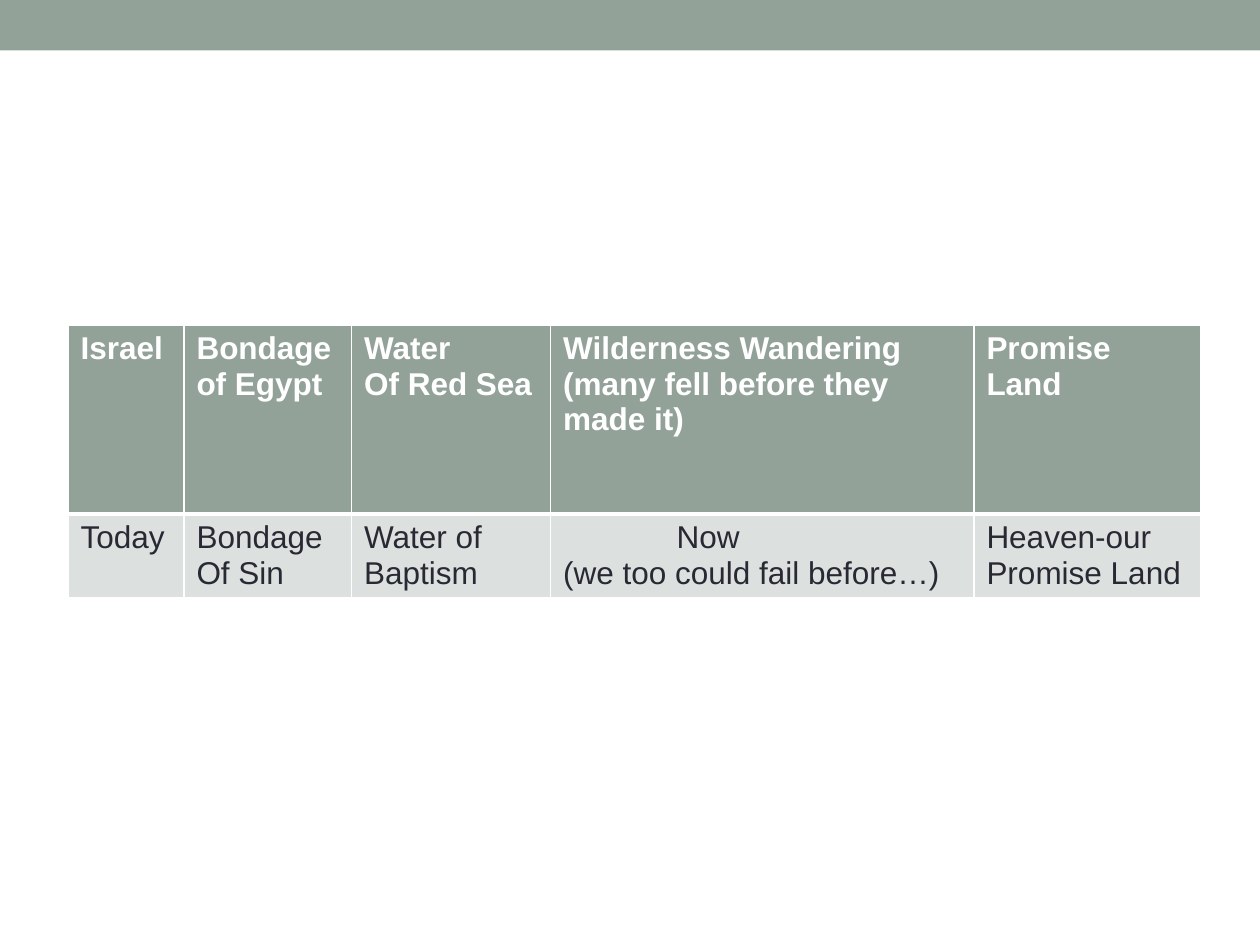
from lxml import etree
from pptx import Presentation
from pptx.dml.color import RGBColor
from pptx.enum.shapes import MSO_SHAPE
from pptx.oxml.ns import qn
from pptx.util import Inches, Pt

RECT = MSO_SHAPE.RECTANGLE
WIDTH, HEIGHT = 10, 7.5
GRID = 100
SAGE, PALE, INK, WHITE = "93A299", "DCE0DE", "292934", "FFFFFF"
NOW_INDENT = 9

COLUMN_WIDTHS = [9.2, 13.3, 15.8, 33.6, 18]
ROW_HEIGHTS = [20, 7.73]
JOURNEY = [
    ["Israel", "Bondage\nof Egypt", "Water\nOf Red Sea",
     "Wilderness Wandering\n(many fell before they made it)", "Promise Land"],
    ["Today", "Bondage\nOf Sin", "Water of\nBaptism",
     "Now\n(we too could fail before…)", "Heaven-our\nPromise Land"],
]


def color(value):
    return RGBColor.from_string(value)


def x(columns):
    return Inches(columns * WIDTH / GRID)


def y(rows):
    return Inches(rows * HEIGHT / GRID)


class Deck:
    font, size = "Arial", 18

    def __init__(self):
        self.prs = Presentation()
        self.prs.slide_width, self.prs.slide_height = x(GRID), y(GRID)
        self.s = self.prs.slides.add_slide(self.prs.slide_layouts[6])
        fill = self.s.background.fill
        fill.solid()
        fill.fore_color.rgb = color(WHITE)

    def band(self, left, top, width, height, fill):
        sp = self.s.shapes.add_shape(RECT, x(left), y(top), x(width), y(height))
        sp.shadow.inherit = False
        sp.fill.solid()
        sp.fill.fore_color.rgb = color(fill)
        sp.line.fill.background()

    def borders(self, cell, **widths):
        tcPr = cell._tc.get_or_add_tcPr()
        for side in "LRTB":
            ln = etree.SubElement(tcPr, qn("a:ln" + side), w=str(Pt(widths.get(side, 1))))
            fill = etree.SubElement(ln, qn("a:solidFill"))
            etree.SubElement(fill, qn("a:srgbClr"), val=WHITE)

    def cell(self, cell, text, header):
        self.borders(cell, **({"B": 3} if header else {"T": 3}))
        cell.fill.solid()
        cell.fill.fore_color.rgb = color(SAGE if header else PALE)
        cell.text = text
        for p in cell.text_frame.paragraphs:
            p.font.name, p.font.size = self.font, Pt(self.size)
            p.font.bold = header
            p.font.color.rgb = color(WHITE if header else INK)

    def table(self, left, top, widths, heights, rows):
        table = self.s.shapes.add_table(
            len(rows), len(widths), x(left), y(top), x(sum(widths)), y(sum(heights))).table
        for column, width in zip(table.columns, widths):
            column.width = x(width)
        for r, (row, height) in enumerate(zip(rows, heights)):
            table.rows[r].height = y(height)
            for c, text in enumerate(row):
                self.cell(table.cell(r, c), text, r == 0)
        return table

    def indent(self, p, columns):
        p._p.get_or_add_pPr().set("marL", str(x(columns)))


def main():
    deck = Deck()
    deck.band(0, 0, GRID, 5.33, SAGE)
    table = deck.table(5.4, 34.4, COLUMN_WIDTHS, ROW_HEIGHTS, JOURNEY)
    deck.indent(table.cell(1, 3).text_frame.paragraphs[0], NOW_INDENT)
    deck.prs.save("out.pptx")


if __name__ == "__main__":
    main()
